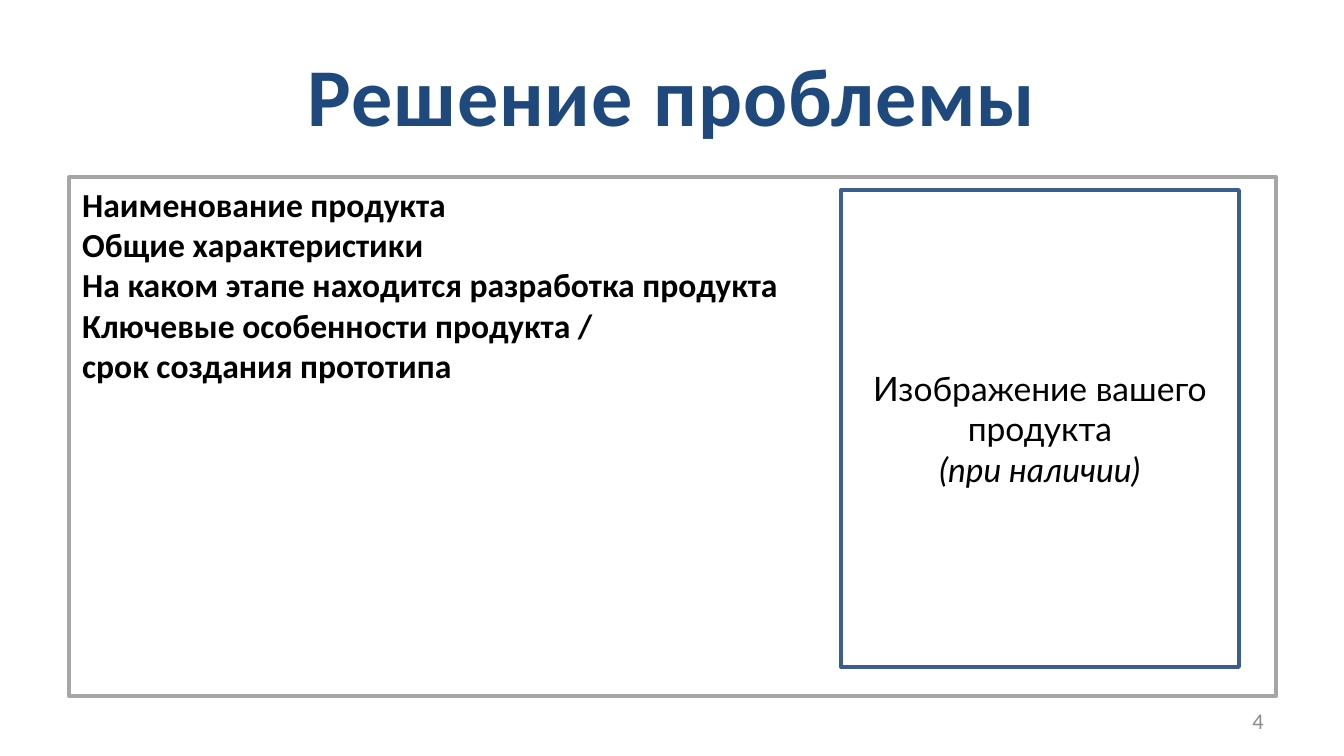
from lxml.etree import SubElement
from pptx import Presentation
from pptx.dml.color import RGBColor
from pptx.enum.shapes import MSO_SHAPE
from pptx.enum.text import MSO_ANCHOR, PP_ALIGN
from pptx.oxml.ns import qn
from pptx.util import Pt

SCALE = 914400 / 134.4


def px(size):
    """Turn px into EMU."""
    return round(size * SCALE)


def paint(target, color):
    """Give a font, fill or line a solid colour."""
    fill = target if hasattr(target, "solid") else target.fill
    fill.solid()
    fill.fore_color.rgb = RGBColor.from_string(color)


def write(shape, lines, size, color="000000", face="Calibri",
          align=PP_ALIGN.LEFT, anchor=MSO_ANCHOR.MIDDLE, bold=False):
    """Fill a shape with (text, italic) lines and return the runs."""
    frame = shape.text_frame
    frame.word_wrap = True
    frame.vertical_anchor = anchor
    runs = []
    for i, (text, slant) in enumerate(lines):
        para = frame.add_paragraph() if i else frame.paragraphs[0]
        para.alignment = align
        run = para.add_run()
        run.text = text
        font = run.font
        font.name, font.size = face, Pt(size)
        font.bold, font.italic = bold, slant
        paint(font, color)
        runs.append(run)
    return runs


def add_label(slide, box, text, size, color, **style):
    """Add a one-line text box and return its run."""
    shape = slide.shapes.add_textbox(*map(px, box))
    return write(shape, [(text, False)], size, color, **style)[0]


def add_panel(slide, box, edge, alpha=100):
    """Add a white outlined rectangle."""
    shape = slide.shapes.add_shape(MSO_SHAPE.RECTANGLE, *map(px, box))
    shape.shadow.inherit = False
    paint(shape.fill, "FFFFFF")
    paint(shape.line, edge)
    shape.line.width = Pt(2)
    if alpha < 100:
        tint = shape.fill._xPr.find(qn("a:solidFill"))[0]
        SubElement(tint, qn("a:alpha")).set("val", str(alpha * 1000))
    return shape


def main():
    """Build the slide."""
    deck = Presentation()
    deck.slide_width, deck.slide_height = px(1344), px(756)
    slide = deck.slides.add_slide(deck.slide_layouts[6])

    title = add_label(slide, (67, 31, 1210, 126), "Решение проблемы", 44,
                      "1F497D", align=PP_ALIGN.CENTER, bold=True)
    title.font._element.set("spc", "50")

    facts = (
        "Наименование продукта",
        "Общие характеристики",
        "На каком этапе находится разработка продукта",
        "Ключевые особенности продукта /",
        "срок создания прототипа",
    )
    panel = add_panel(slide, (69, 177, 1207, 519), "A6A6A6", alpha=84)
    write(panel, [(fact, False) for fact in facts], 18,
          anchor=MSO_ANCHOR.TOP, bold=True)

    add_label(slide, (964, 700, 313, 41), "4", 12, "8C8C8C",
              align=PP_ALIGN.RIGHT)

    photo = add_panel(slide, (841, 190, 398, 477), "3A5F8C")
    write(photo, [("Изображение вашего продукта", False),
                  ("(при наличии)", True)], 18,
          face="Lato", align=PP_ALIGN.CENTER)

    deck.save("out.pptx")


if __name__ == "__main__":
    main()
